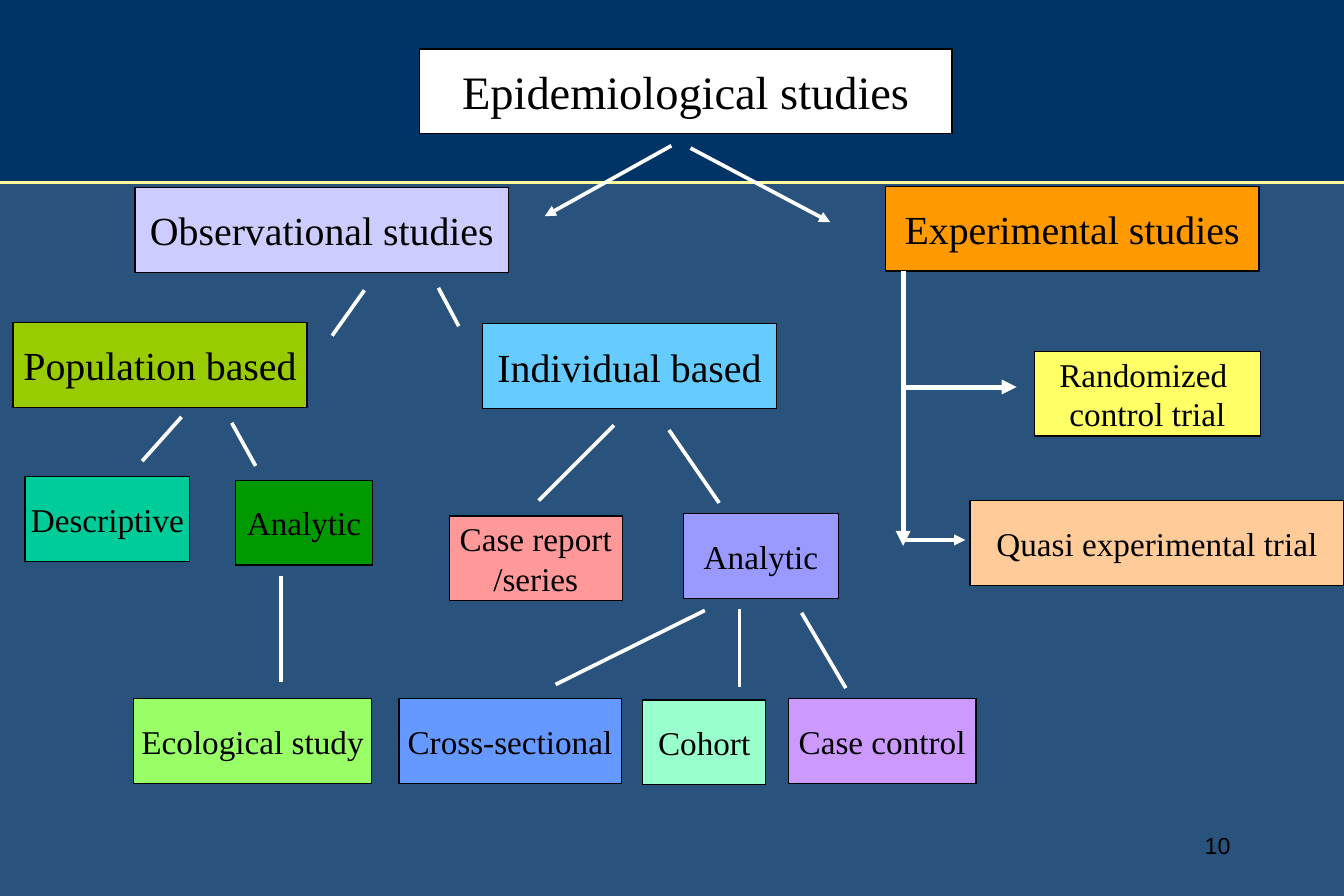
from dataclasses import dataclass

from lxml.etree import SubElement
from pptx import Presentation
from pptx.dml.color import RGBColor as Rgb
from pptx.enum.shapes import MSO_CONNECTOR as Connector, MSO_SHAPE as Preset
from pptx.enum.text import MSO_ANCHOR as Anchor, MSO_AUTO_SIZE as AutoSize, PP_ALIGN as Align
from pptx.oxml.ns import qn
from pptx.util import Pt

PX = 9144
SLIDE_W, SLIDE_H = 1125, 750
HEADER_H = 153
BOX_H = 71


@dataclass(frozen=True)
class Theme:
    backdrop: str = "29537D"
    header: str = "003366"
    rule: str = "FFFF99"
    ink: str = "000000"
    light: str = "FFFFFF"
    diagram_font: str = "Times New Roman"
    number_font: str = "Arial"
    title_size: int = 28
    branch_size: int = 24
    leaf_size: int = 20
    number_size: int = 14
    outline: float = 0.75
    rule_width: float = 2
    link: float = 2.25
    trunk: float = 3


THEME = Theme()

BRANCHES = [
    ("Experimental studies", 741, 156, 313, "FF9900"),
    ("Observational studies", 113, 157, 313, "CCCCFF"),
    ("Individual based", 404, 271, 246, "66CCFF"),
    ("Population based", 11, 270, 246, "99CC00"),
]

LEAVES = [
    ("Quasi experimental trial", 812, 419, 313, "FFCC99"),
    ("Randomized \ncontrol trial", 866, 294, 189, "FFFF66"),
    ("Ecological study", 112, 585, 199, "99FF66"),
    ("Analytic", 197, 402, 115, "009900"),
    ("Descriptive", 21, 399, 138, "00CC99"),
    ("Analytic", 572, 430, 130, "9999FF"),
    ("Case report\n/series", 376, 432, 145, "FF9999"),
    ("Cross-sectional", 334, 585, 186, "6699FF"),
    ("Cohort", 538, 586, 103, "99FFCC"),
    ("Case control", 660, 585, 157, "CC99FF"),
]

TRUNK_ARROWS = [(756, 227, 756, 457), (756, 324, 851, 324)]

LINK_ARROWS = [
    (756, 452, 808, 452),
    (562, 122, 456, 181),
    (578, 124, 695, 186),
]

LINKS = [
    (514, 356, 451, 419),
    (560, 360, 602, 421),
    (590, 511, 465, 573),
    (619, 510, 619, 575),
    (671, 513, 708, 576),
    (152, 349, 119, 386),
    (194, 354, 214, 390),
    (235, 482, 235, 571),
    (305, 243, 278, 281),
    (367, 241, 384, 273),
]


def emu(*lengths):
    return [length * PX for length in lengths]


def paint(target, color):
    target.fill.solid()
    target.fill.fore_color.rgb = Rgb.from_string(color)


def write(frame, text, size, font=THEME.diagram_font, align=Align.CENTER):
    frame.word_wrap = False
    frame.auto_size = AutoSize.NONE
    frame.vertical_anchor = Anchor.MIDDLE
    for index, line in enumerate(text.split("\n")):
        paragraph = frame.add_paragraph() if index else frame.paragraphs[0]
        paragraph.alignment = align
        run = paragraph.add_run()
        run.text = line
        run.font.size = Pt(size)
        run.font.name = font
        run.font.color.rgb = Rgb.from_string(THEME.ink)


def style_box(box, text, fill, size):
    paint(box, fill)
    box.line.color.rgb = Rgb.from_string(THEME.ink)
    box.line.width = Pt(THEME.outline)
    write(box.text_frame, text, size)


def add_box(slide, text, left, top, width, fill, size):
    box = slide.shapes.add_shape(Preset.RECTANGLE, *emu(left, top, width, BOX_H))
    box.shadow.inherit = False
    style_box(box, text, fill, size)


def add_line(slide, ends, width, color=THEME.light, arrow=False):
    line = slide.shapes.add_connector(Connector.STRAIGHT, *emu(*ends))
    line.line.color.rgb = Rgb.from_string(color)
    line.line.width = Pt(width)
    if arrow:
        SubElement(line.line._get_or_add_ln(), qn("a:tailEnd"), type="triangle")
    SubElement(line._element.spPr, qn("a:effectLst"))


def add_header(slide):
    band = slide.shapes.add_shape(Preset.RECTANGLE, *emu(0, 0, SLIDE_W, HEADER_H))
    band.shadow.inherit = False
    paint(band, THEME.header)
    band.line.fill.background()
    add_line(slide, (0, HEADER_H, SLIDE_W, HEADER_H), THEME.rule_width, THEME.rule)


def add_title(slide):
    title = slide.shapes.title
    title.left, title.top, title.width, title.height = emu(351, 41, 446, BOX_H)
    style_box(title, "Epidemiological studies", THEME.light, THEME.title_size)
    slide.shapes._spTree.append(title._element)


def add_page_number(slide):
    number = slide.shapes.add_textbox(*emu(810, 682, 230, 51))
    write(number.text_frame, "10", THEME.number_size, THEME.number_font, Align.RIGHT)


def main():
    deck = Presentation()
    deck.slide_width, deck.slide_height = emu(SLIDE_W, SLIDE_H)
    slide = deck.slides.add_slide(deck.slide_layouts.get_by_name("Title Only"))
    paint(slide.background, THEME.backdrop)
    add_header(slide)
    add_page_number(slide)
    add_title(slide)
    for boxes, size in ((BRANCHES, THEME.branch_size), (LEAVES, THEME.leaf_size)):
        for box in boxes:
            add_box(slide, *box, size)
    for ends in TRUNK_ARROWS:
        add_line(slide, ends, THEME.trunk, arrow=True)
    for ends in LINK_ARROWS:
        add_line(slide, ends, THEME.link, arrow=True)
    for ends in LINKS:
        add_line(slide, ends, THEME.link)
    deck.save("out.pptx")


if __name__ == "__main__":
    main()
